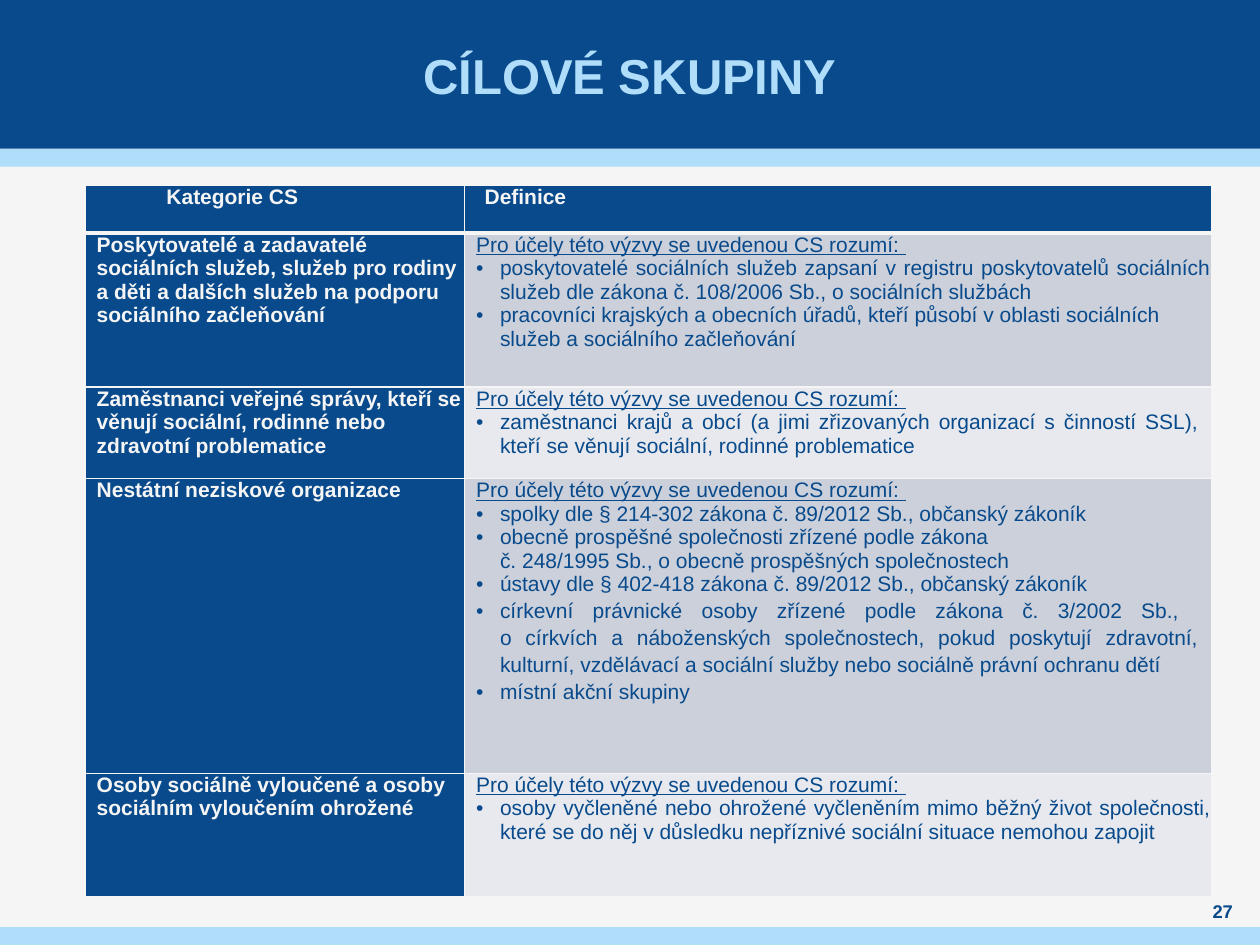
from lxml.etree import SubElement
from pptx import Presentation
from pptx.dml.color import RGBColor
from pptx.enum.shapes import MSO_SHAPE
from pptx.enum.text import MSO_ANCHOR, PP_ALIGN as Align
from pptx.oxml.ns import qn
from pptx.util import Cm, Pt

# Content
TITLE = "CÍLOVÉ SKUPINY"
PAGE_NUMBER = "27"
HEADERS = ("Kategorie CS", "Definice")
INTRO = "Pro účely této výzvy se uvedenou CS rozumí: "

LEFT, JUSTIFIED = {}, {"alignment": Align.JUSTIFY}
LOOSE = {"line_spacing": 1.15}

# category, row height, right margin of the definition, bullets with format
GROUPS = [
    ("Poskytovatelé a zadavatelé sociálních služeb, služeb pro rodiny a děti "
     "a dalších služeb na podporu sociálního začleňování", 3.1, 0, [
         ("poskytovatelé sociálních služeb zapsaní v registru poskytovatelů "
          "sociálních služeb dle zákona č. 108/2006 Sb., o sociálních službách", JUSTIFIED),
         ("pracovníci krajských a obecních úřadů, kteří působí v oblasti sociálních "
          "služeb a sociálního začleňování", LEFT)]),
    ("Zaměstnanci veřejné správy, kteří se věnují sociální, rodinné nebo "
     "zdravotní problematice", 1.85, 0.25, [
         ("zaměstnanci krajů a obcí (a jimi zřizovaných organizací s činností SSL), "
          "kteří se věnují sociální, rodinné problematice", JUSTIFIED)]),
    ("Nestátní neziskové organizace", 5.94, 0.25, [
        ("spolky dle § 214-302 zákona č. 89/2012 Sb., občanský zákoník", LEFT),
        ("obecně prospěšné společnosti zřízené podle zákona \n"
         "č. 248/1995 Sb., o obecně prospěšných společnostech", LEFT),
        ("ústavy dle § 402-418 zákona č. 89/2012 Sb., občanský zákoník", LEFT),
        ("církevní právnické osoby zřízené podle zákona č. 3/2002 Sb., \n"
         "o církvích a náboženských společnostech, pokud poskytují zdravotní, kulturní, "
         "vzdělávací a sociální služby nebo sociálně právní ochranu dětí",
         {**JUSTIFIED, **LOOSE}),
        ("místní akční skupiny", LOOSE)]),
    ("Osoby sociálně vyloučené a osoby sociálním vyloučením ohrožené", 2.49, 0, [
        ("osoby vyčleněné nebo ohrožené vyčleněním mimo běžný život společnosti, které "
         "se do něj v důsledku nepříznivé sociální situace nemohou zapojit", JUSTIFIED)]),
]

# Look
BLUE, SKY, PAPER = "084A8B", "AFDDFA", "F5F5F5"
STRIPES = ("CCD0DA", "E7E9EE")
WIDTH, HEIGHT = 25.4, 19.05
BANDS = [(3.0, 0.36, SKY), (0, 3.0, BLUE), (18.69, 0.36, SKY)]  # top, height, fill
COLUMNS = (7.65, 15.06)
HEADER_HEIGHT = 0.97
CELL_MARGIN, HANGING = 0.24, 0.48
THIN, THICK = 1, 3


def paint(fill, color):
    fill.solid()
    fill.fore_color.rgb = RGBColor.from_string(color)


def write(paragraph, text, color, layout=LEFT, **font):
    paragraph.text = text
    for name, value in layout.items():
        setattr(paragraph, name, value)
    for run in paragraph.runs:
        for name, value in {"name": "Arial", "size": Pt(12), **font}.items():
            setattr(run.font, name, value)
        run.font.color.rgb = RGBColor.from_string(color)


def add_bullet(paragraph):
    properties = paragraph._p.get_or_add_pPr()
    properties.set("marL", str(Cm(HANGING)))
    properties.set("indent", str(-Cm(HANGING)))
    SubElement(properties, qn("a:buFont"), typeface="Arial")
    SubElement(properties, qn("a:buChar"), char="•")


def set_margins(frame, left=0, right=0):
    margins = {"margin_left": left, "margin_right": right,
               "margin_top": 0, "margin_bottom": 0}
    for name, value in margins.items():
        setattr(frame, name, Cm(value))


def style_cell(cell, fill, top, bottom, left=CELL_MARGIN, right=0):
    set_margins(cell, left, right)
    properties = cell._tc.get_or_add_tcPr()
    for side, width in (("L", THIN), ("R", THIN), ("T", top), ("B", bottom)):
        line = SubElement(properties, qn(f"a:ln{side}"), w=str(Pt(width)))
        solid = SubElement(line, qn("a:solidFill"))
        SubElement(solid, qn("a:srgbClr"), val=PAPER)
    paint(cell.fill, fill)


presentation = Presentation()
presentation.slide_width, presentation.slide_height = Cm(WIDTH), Cm(HEIGHT)
slide = presentation.slides.add_slide(presentation.slide_layouts[5])
paint(slide.background.fill, PAPER)

# Bands
for top, height, color in BANDS:
    band = slide.shapes.add_shape(MSO_SHAPE.RECTANGLE, 0, Cm(top), Cm(WIDTH), Cm(height))
    band.shadow.inherit = False
    paint(band.fill, color)
    band.line.fill.background()

# Title, brought in front of the bands
title = slide.shapes.title
slide.shapes._spTree.append(title._element)
title.left, title.top, title.width, title.height = Cm(1), Cm(0), Cm(23.4), Cm(3)
set_margins(title.text_frame, 0.1, 0.1)
title.text_frame.vertical_anchor = MSO_ANCHOR.MIDDLE
write(title.text_frame.paragraphs[0], TITLE, SKY, {"alignment": Align.CENTER},
      size=Pt(28), bold=True)

# Table
heights = [HEADER_HEIGHT] + [group[1] for group in GROUPS]
table = slide.shapes.add_table(len(heights), len(COLUMNS), Cm(1.71), Cm(3.73),
                               Cm(sum(COLUMNS)), Cm(sum(heights))).table
for column, width in zip(table.columns, COLUMNS):
    column.width = Cm(width)
for row, height in zip(table.rows, heights):
    row.height = Cm(height)

# Header row
header_layouts = [({"alignment": Align.CENTER}, 0, 1.7), (LEFT, 0.41, 0)]
for index, (layout, left, right) in enumerate(header_layouts):
    cell = table.cell(0, index)
    style_cell(cell, BLUE, THIN, THICK, left, right)
    write(cell.text_frame.paragraphs[0], HEADERS[index], PAPER, layout, bold=True)

# Target groups
for index, (category, _, right, bullets) in enumerate(GROUPS):
    top = THIN if index else THICK
    category_cell, definition_cell = table.cell(index + 1, 0), table.cell(index + 1, 1)
    style_cell(category_cell, BLUE, top, THIN)
    write(category_cell.text_frame.paragraphs[0], category, PAPER, bold=True)

    style_cell(definition_cell, STRIPES[index % 2], top, THIN, right=right)
    frame = definition_cell.text_frame
    write(frame.paragraphs[0], INTRO, BLUE, JUSTIFIED, bold=False, underline=True)
    for text, layout in bullets:
        paragraph = frame.add_paragraph()
        write(paragraph, text, BLUE, layout, bold=False)
        add_bullet(paragraph)

# Page number
number = slide.shapes.add_textbox(Cm(24), Cm(18.11), Cm(1.3), Cm(0.51)).text_frame
number.word_wrap = True
number.vertical_anchor = MSO_ANCHOR.MIDDLE
set_margins(number)
write(number.paragraphs[0], PAGE_NUMBER, BLUE, {"alignment": Align.CENTER},
      size=Pt(10.5), bold=True)

presentation.save("out.pptx")
